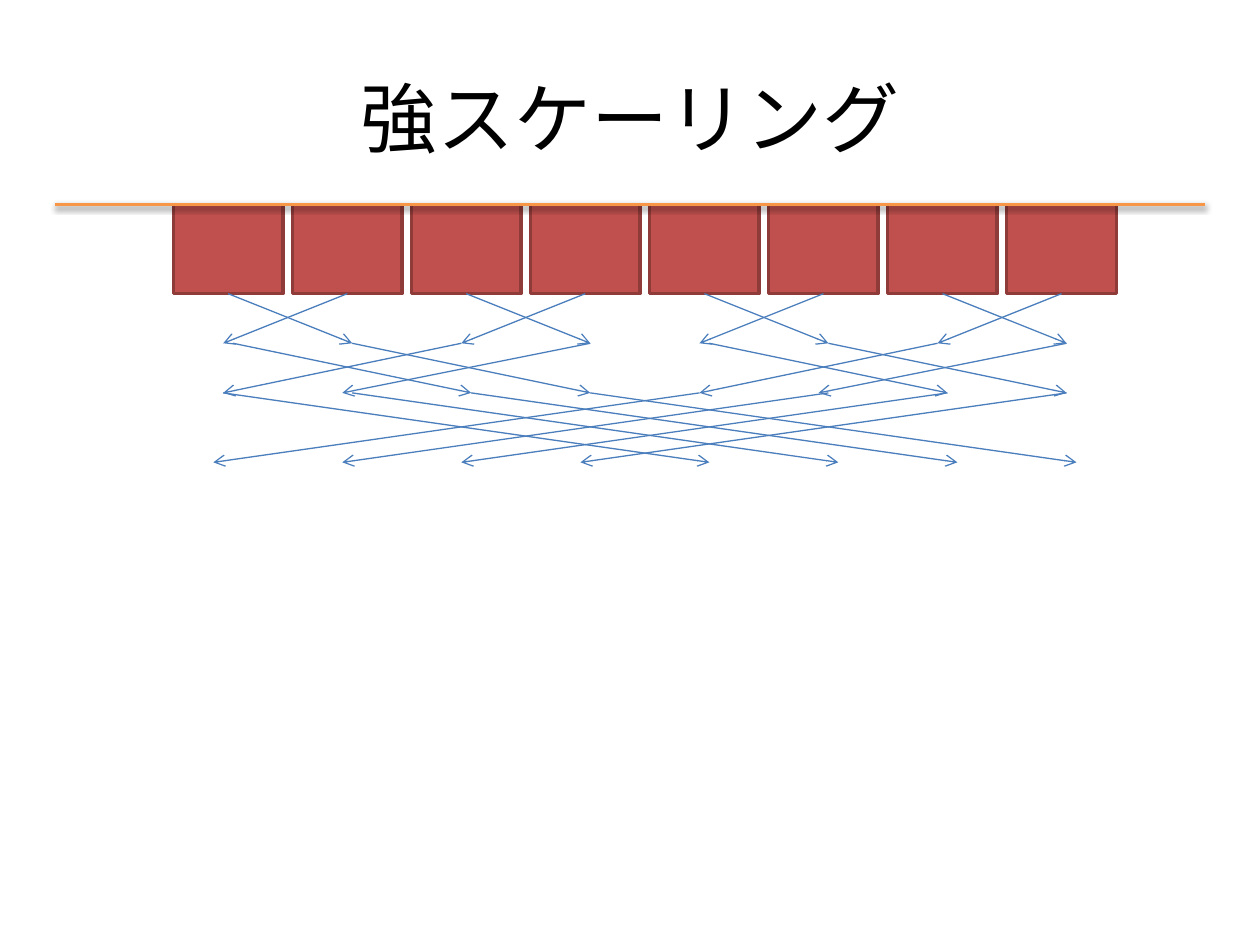
from itertools import cycle
from lxml.etree import SubElement
from pptx import Presentation
from pptx.dml.color import RGBColor
from pptx.enum.shapes import MSO_CONNECTOR as Conn, MSO_SHAPE as Shape
from pptx.enum.text import MSO_ANCHOR as Anchor, PP_ALIGN as Align
from pptx.oxml.ns import qn
from pptx.util import Cm, Pt

NODES = 8
FIRST_CENTER, PITCH = 4.6, 2.4
BOX_W, BOX_H = 2.21, 1.8
RULE_Y = 4.12
ROWS = [5.92, 6.92, 7.92, 9.32]
START_SHIFTS = [(0,), (0.1, 0.1, -0.1, 0.1), (-0.1, 0.1, 0.1, 0.1)]
END_SHIFTS = [
    (0.1, -0.1),
    (0.1, 0.1, -0.1, -0.1),
    (0.1, 0.3, 0.3, 0.3, -0.3, -0.1, -0.1, -0.1),
]


def color(value):
    return RGBColor.from_string(value)


def center(node):
    return FIRST_CENTER + PITCH * node


def set_attrs(obj, values):
    for name, value in values.items():
        setattr(obj, name, value)


def add_title(s, text):
    sp = s.shapes.title
    set_attrs(sp, {"left": Cm(1.27), "top": Cm(0.76),
                   "width": Cm(22.86), "height": Cm(3.18)})
    tf = sp.text_frame
    set_attrs(tf, {"word_wrap": True, "vertical_anchor": Anchor.MIDDLE})
    p = tf.paragraphs[0]
    p.alignment = Align.CENTER
    r = p.add_run()
    r.text = text
    set_attrs(r.font, {"name": "Calibri", "size": Pt(44)})
    r.font.color.rgb = color("000000")


def add_box(s, node):
    sp = s.shapes.add_shape(Shape.RECTANGLE, Cm(center(node) - BOX_W / 2),
                            Cm(RULE_Y), Cm(BOX_W), Cm(BOX_H))
    sp.shadow.inherit = False
    sp.fill.solid()
    sp.fill.fore_color.rgb = color("C0504D")
    sp.line.color.rgb = color("8E3B39")
    sp.line.width = Pt(2)
    return sp


def add_line(s, x1, y1, x2, y2, line_color, width):
    sp = s.shapes.add_connector(Conn.STRAIGHT, Cm(x1), Cm(y1), Cm(x2), Cm(y2))
    sp.line.color.rgb = color(line_color)
    sp.line.width = Pt(width)
    effects = SubElement(sp._element.spPr, qn("a:effectLst"))
    return sp, effects


def add_arrow(s, x1, y1, x2, y2):
    sp, _ = add_line(s, x1, y1, x2, y2, "4B7EBC", 0.75)
    SubElement(sp.line._get_or_add_ln(), qn("a:tailEnd"), type="arrow")
    return sp


def add_exchange(s, stage, boxes):
    shifts = zip(cycle(START_SHIFTS[stage]), cycle(END_SHIFTS[stage]))
    for node, (start, end) in zip(range(NODES), shifts):
        partner = node ^ 2 ** stage
        sp = add_arrow(s, center(node) + start, ROWS[stage],
                       center(partner) + end, ROWS[stage + 1])
        if stage == 0:
            sp.begin_connect(boxes[node], 2)


def add_rule(s):
    _, effects = add_line(s, 1.1, RULE_Y, 24.3, RULE_Y, "F79646", 2)
    shadow = SubElement(effects, qn("a:outerShdw"), blurRad="40000",
                        dist="20000", dir="5400000", rotWithShape="0")
    black = SubElement(shadow, qn("a:srgbClr"), val="000000")
    SubElement(black, qn("a:alpha"), val="38000")


def main():
    prs = Presentation()
    set_attrs(prs, {"slide_width": Cm(25.4), "slide_height": Cm(19.05)})
    s = prs.slides.add_slide(prs.slide_layouts[5])
    add_title(s, "強スケーリング")
    boxes = [add_box(s, node) for node in range(NODES)]
    for stage in range(len(START_SHIFTS)):
        add_exchange(s, stage, boxes)
    add_rule(s)
    prs.save("out.pptx")


if __name__ == "__main__":
    main()
